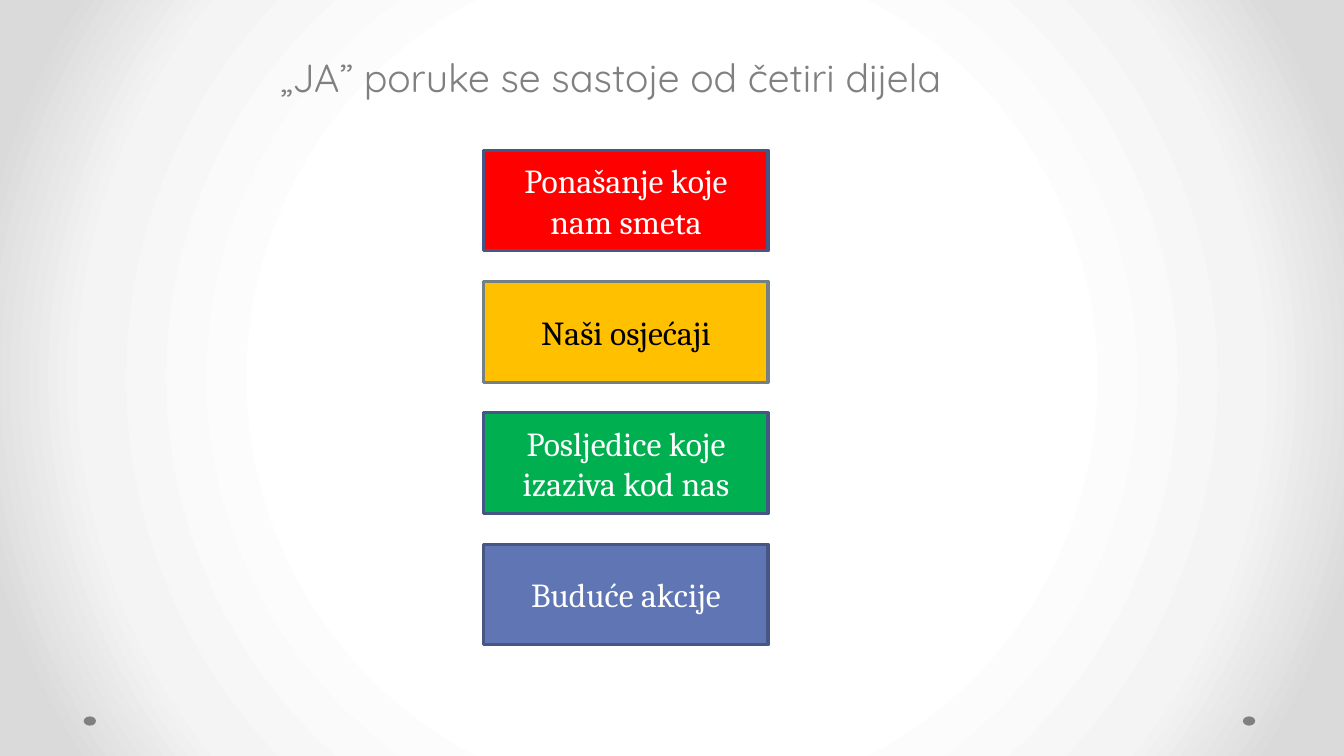
from pptx import Presentation
from pptx.dml.color import RGBColor
from pptx.enum.shapes import MSO_SHAPE
from pptx.enum.text import MSO_ANCHOR, PP_ALIGN
from pptx.oxml import parse_xml
from pptx.oxml.ns import nsdecls
from pptx.util import Pt

RECT, OVAL = MSO_SHAPE.RECTANGLE, MSO_SHAPE.OVAL
MIDDLE, CENTER = MSO_ANCHOR.MIDDLE, PP_ALIGN.CENTER

GREY = "808080"
BOX_LEFT, BOX_TOP, BOX_W, BOX_H, BOX_STEP = 345.6, 107.3, 203, 72, 93.8
# text, fill, line, text colour
PARTS = [
    ("Ponašanje koje nam smeta", "FF0000", "475785", "FFFFFF"),
    ("Naši osjećaji", "FFC000", "758085", "000000"),
    ("Posljedice koje izaziva kod nas", "00B050", "475785", "FFFFFF"),
    ("Buduće akcije", "6076B4", "475785", "FFFFFF"),
]


def rgb(color):
    return RGBColor.from_string(color)


def set_background(s, stops):
    """Fill the background with a circular gradient; stops are (percent, colour)."""
    s.background.fill.gradient()
    grad = s._element.xpath(".//p:bgPr/a:gradFill")[0]
    gs = "".join(f'<a:gs pos="{pos * 1000}"><a:srgbClr val="{color}"/></a:gs>'
                 for pos, color in stops)
    grad.getparent().replace(grad, parse_xml(
        f'<a:gradFill {nsdecls("a")} rotWithShape="1"><a:gsLst>{gs}</a:gsLst>'
        '<a:path path="circle"><a:fillToRect l="50000" t="50000" r="50000" b="50000"/>'
        '</a:path></a:gradFill>'))


def add_filled(s, kind, x, y, w, h, fill):
    sp = s.shapes.add_shape(kind, Pt(x), Pt(y), Pt(w), Pt(h))
    sp.shadow.inherit = False
    sp.fill.solid()
    sp.fill.fore_color.rgb = rgb(fill)
    sp.line.fill.background()
    return sp


def set_text(sp, text, font, size, color):
    tf = sp.text_frame
    tf.word_wrap = True
    p = tf.paragraphs[0]
    p.text = text
    p.font.name = font
    p.font.size = Pt(size)
    p.font.color.rgb = rgb(color)
    return p


def add_title(s, text):
    sp = s.shapes.add_textbox(Pt(193), Pt(34.5), Pt(560), Pt(43))
    set_text(sp, text, "Quicksand", 28, GREY)


def add_part(s, y, text, fill, line, color):
    sp = add_filled(s, RECT, BOX_LEFT, y, BOX_W, BOX_H, fill)
    sp.line.color.rgb = rgb(line)
    sp.line.width = Pt(2.25)
    sp.text_frame.vertical_anchor = MIDDLE
    set_text(sp, text, "Cambria", 24, color).alignment = CENTER


def main():
    prs = Presentation()
    prs.slide_width, prs.slide_height = Pt(960), Pt(540)
    s = prs.slides.add_slide(prs.slide_layouts[6])
    set_background(s, [(50, "FFFFFF"), (76, "F4F4F4"), (92, "DADADA")])

    # Corner dots
    for x in (887.8, 59.8):
        add_filled(s, OVAL, x, 511.7, 8.8, 6.6, GREY)

    # Title and the four parts of the message
    add_title(s, "„JA” poruke se sastoje od četiri dijela")
    for i, part in enumerate(PARTS):
        add_part(s, BOX_TOP + i * BOX_STEP, *part)

    prs.save("out.pptx")


if __name__ == "__main__":
    main()
